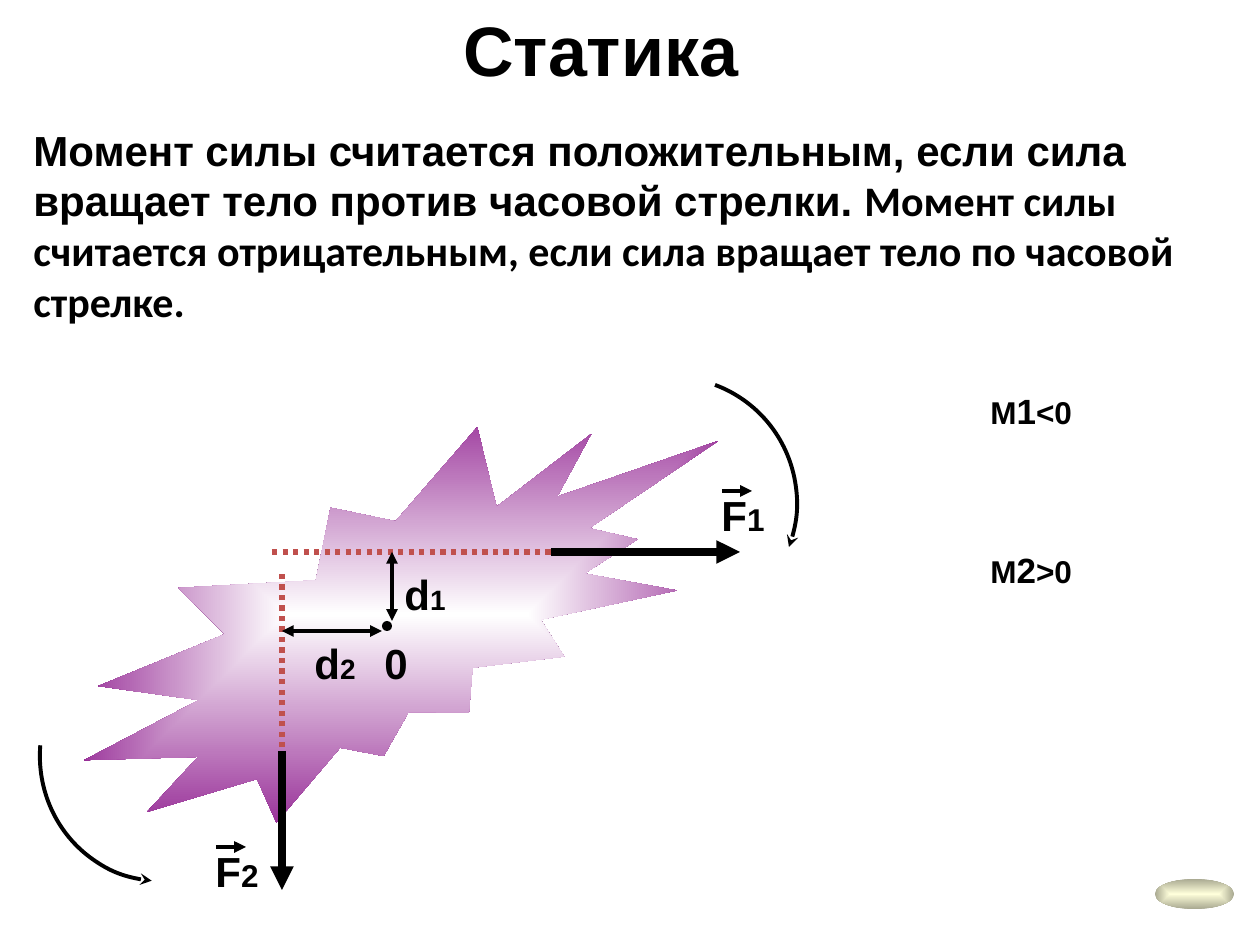
from lxml import etree
from pptx import Presentation
from pptx.dml.color import RGBColor
from pptx.enum.dml import MSO_LINE
from pptx.enum.shapes import MSO_CONNECTOR, MSO_SHAPE
from pptx.enum.text import MSO_AUTO_SIZE
from pptx.oxml.ns import qn
from pptx.util import Pt

PX = 914400 / 126
BLACK = RGBColor(0, 0, 0)
WHITE = RGBColor(255, 255, 255)
PURPLE = RGBColor(0x80, 0, 0x80)
RED = RGBColor(0xC0, 0x50, 0x4D)
CREAM = RGBColor(0xFF, 0xFF, 0xDB)
OLIVE = RGBColor(0xA9, 0xA9, 0x91)
STRAIGHT = MSO_CONNECTOR.STRAIGHT
DOTTED = MSO_LINE.ROUND_DOT
SEAL = MSO_SHAPE.EXPLOSION2
OVAL = MSO_SHAPE.OVAL
FIT = MSO_AUTO_SIZE.SHAPE_TO_FIT_TEXT

TITLE = ((451, 0, 301, 97), [("Статика", 40, "Arial")])
RULE = ((21, 118, 1203, 214), [
    ("Момент силы считается положительным, если сила вращает тело "
     "против часовой стрелки. ", 24, "Arial"),
    ("Момент силы считается отрицательным, если сила вращает тело "
     "по часовой стрелке.", 24, "Calibri"),
])
LABELS = [
    ((372, 631, 49, 63), [("0", 24, "Arial")]),
    ((302, 631, 67, 63), [("d", 24, "Arial"), ("2", 16, "Arial")]),
    ((392, 562, 67, 63), [("d", 24, "Arial"), ("1", 16, "Arial")]),
]
FORCES = [("2", 203, 839), ("1", 709, 483)]
MOMENTS = [("1", "<0", 383), ("2", ">0", 542)]
ACTION_LINES = [(272, 552, 610, 552), (282, 800, 282, 572)]
FORCE_ARROWS = [(551, 552, 740, 552), (282, 751, 282, 890)]
ARMS = [(392, 552, 392, 621), (282, 631, 382, 631)]
# (left, top, width, height), rotation, clockwise
TURNS = [((689, 403, 126, 126), 20.5, True), ((33, 752, 126, 122), 94.6, False)]


def emu(*lengths):
    return [round(length * PX) for length in lengths]


def add_text(shapes, box, runs, wrap=False):
    frame = shapes.add_textbox(*emu(*box)).text_frame
    frame.word_wrap = wrap
    frame.auto_size = FIT
    for text, size, face in runs:
        run = frame.paragraphs[0].add_run()
        run.text = text
        run.font.size = Pt(size)
        run.font.name = face
        run.font.bold = True
        run.font.color.rgb = BLACK


def style_line(line, color, width, head=None, tail=None):
    line.color.rgb = color
    line.width = Pt(width)
    ln = line._get_or_add_ln()
    for tag, kind in (("a:headEnd", head), ("a:tailEnd", tail)):
        if kind:
            etree.SubElement(ln, qn(tag), type=kind)


def add_line(shapes, ends, color, width, head=None, tail=None, dash=None):
    connector = shapes.add_connector(STRAIGHT, *emu(*ends))
    etree.SubElement(connector._element.spPr, qn("a:effectLst"))
    if dash:
        connector.line.dash_style = dash
    style_line(connector.line, color, width, head, tail)


def add_plain(shapes, preset, box):
    shape = shapes.add_shape(preset, *emu(*box))
    shape.shadow.inherit = False
    shape.line.fill.background()
    return shape


def fill_from_center(shape, inner, outer):
    shape.fill.gradient()
    for stop, color, position in zip(shape.fill.gradient_stops, (inner, outer), (0, 1)):
        stop.color.rgb = color
        stop.position = position
    gradient = shape._element.spPr.find(qn("a:gradFill"))
    gradient.set("rotWithShape", "0")
    gradient.remove(gradient.find(qn("a:lin")))
    path = etree.SubElement(gradient, qn("a:path"), path="shape")
    etree.SubElement(path, qn("a:fillToRect"), dict.fromkeys("ltrb", "50000"))


def add_turn(shapes, box, rotation, clockwise):
    left, top, width, height = emu(*box)
    start, end = (top, top + height) if clockwise else (top + height, top)
    builder = shapes.build_freeform(left, start)
    builder.add_line_segments([(left + width, end)], close=False)
    turn = builder.convert_to_shape()
    straight = next(turn._element.iter(qn("a:lnTo")))
    arc = etree.Element(
        qn("a:arcTo"), wR=str(width), hR=str(height),
        stAng="16200000" if clockwise else "5400000",
        swAng="5400000" if clockwise else "-5400000")
    straight.getparent().replace(straight, arc)
    turn.rotation = rotation
    turn.shadow.inherit = False
    turn.fill.background()
    style_line(turn.line, BLACK, 2.25, tail="stealth")


def main():
    """Build the slide on the sign of a moment of force."""
    deck = Presentation()
    deck.slide_width, deck.slide_height = emu(1260, 945)
    shapes = deck.slides.add_slide(deck.slide_layouts[6]).shapes

    add_text(shapes, *TITLE)
    body = shapes.add_group_shape().shapes
    seal = add_plain(body, SEAL, (54, 462, 704, 305))
    seal.rotation = 340.4
    fill_from_center(seal, WHITE, PURPLE)
    pivot = add_plain(body, OVAL, (382, 621, 10, 10))
    pivot.fill.solid()
    pivot.fill.fore_color.rgb = BLACK

    for ends in ACTION_LINES:
        add_line(shapes, ends, RED, 3, dash=DOTTED)
    for ends in FORCE_ARROWS:
        add_line(shapes, ends, BLACK, 4.5, tail="triangle")
    for ends in ARMS:
        add_line(shapes, ends, BLACK, 2.25, "triangle", "triangle")
    for box, runs in LABELS:
        add_text(shapes, box, runs)
    for index, left, top in FORCES:
        force = shapes.add_group_shape().shapes
        add_text(force, (left, top, 68, 63), [("F", 24, "Arial"), (index, 18, "Arial")])
        add_line(force, (left + 13, top + 8, left + 43, top + 8), BLACK, 2.25, tail="triangle")
    add_text(shapes, *RULE, wrap=True)
    for index, sign, top in MOMENTS:
        add_text(shapes, (978, top, 197, 105),
                 [("М", 18, "Arial"), (index, 20, "Arial"), (sign, 18, "Arial")])
    for turn in TURNS:
        add_turn(shapes, *turn)
    fill_from_center(add_plain(shapes, OVAL, (1155, 879, 79, 30)), CREAM, OLIVE)

    deck.save("out.pptx")


if __name__ == "__main__":
    main()
